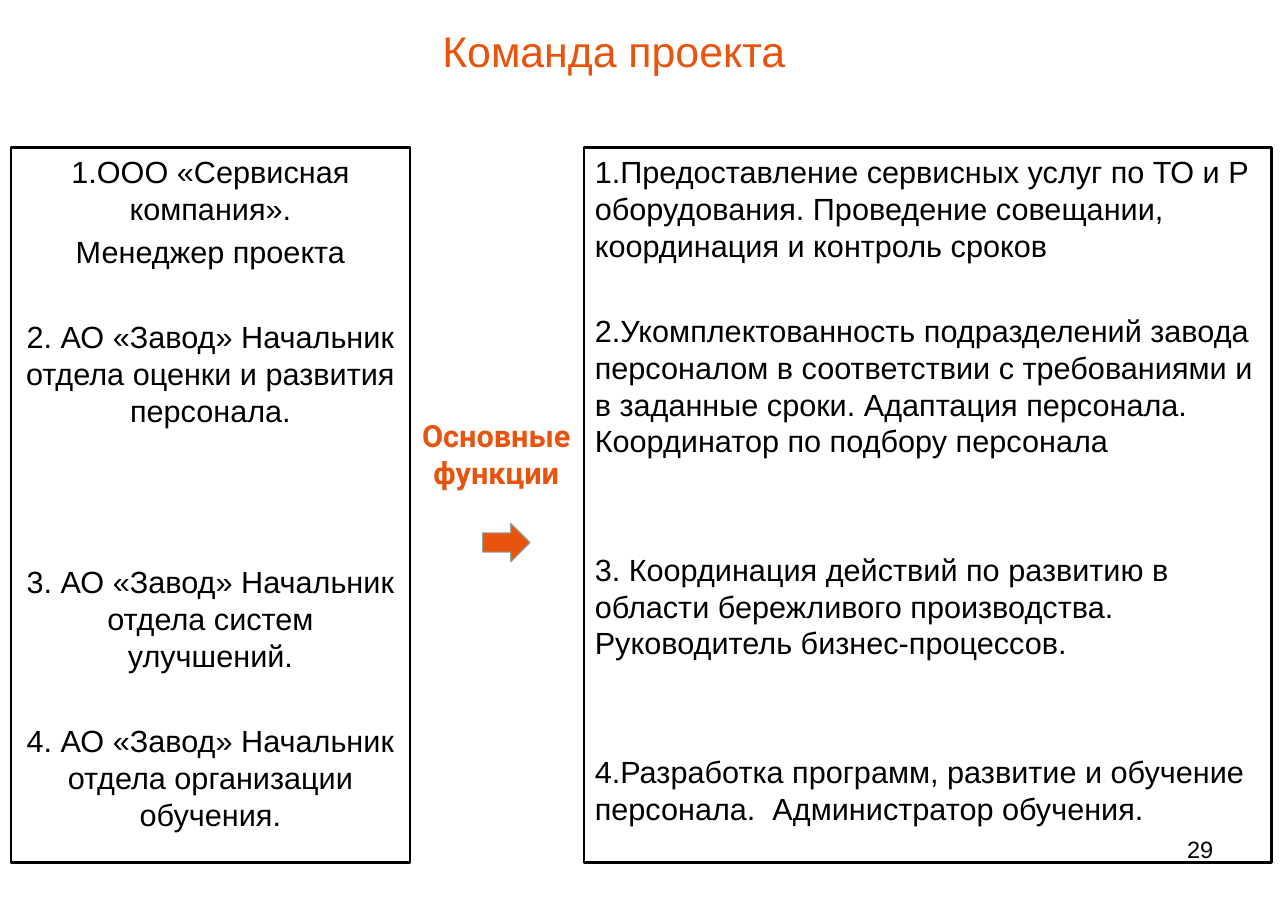
from dataclasses import dataclass

from pptx import Presentation
from pptx.dml.color import RGBColor
from pptx.enum.shapes import MSO_SHAPE
from pptx.enum.text import MSO_ANCHOR, PP_ALIGN
from pptx.util import Inches, Pt

RECT, ARROW = MSO_SHAPE.RECTANGLE, MSO_SHAPE.RIGHT_ARROW
LEFT, MID, RIGHT = PP_ALIGN.LEFT, PP_ALIGN.CENTER, PP_ALIGN.RIGHT
TOP, CENTER = MSO_ANCHOR.TOP, MSO_ANCHOR.MIDDLE
WIDTH, HEIGHT = Inches(11.69), Inches(8.27)
BLACK, ORANGE, GREY = "000000", "E8540E", "8AA6A8"
GAP, ROW = 4, 28


@dataclass
class Area:
    """Place on the slide in percent of its width and height."""
    left: float
    top: float
    width: float
    height: float

    def box(self) -> tuple[int, int, int, int]:
        """Return the place in slide units."""
        return (int(WIDTH * self.left / 100), int(HEIGHT * self.top / 100),
                int(WIDTH * self.width / 100), int(HEIGHT * self.height / 100))


@dataclass
class Item:
    """A paragraph and the number of empty rows above it."""
    text: str
    rows: int = 0


@dataclass
class Block:
    """Paragraphs of one style, with or without a frame."""
    area: Area
    items: list[Item]
    align: PP_ALIGN = MID
    size: float = 20
    font: str = "Arial"
    color: str = BLACK
    bold: bool = False
    anchor: MSO_ANCHOR = TOP
    framed: bool = False


BLOCKS = [
    Block(Area(9.58, 1.45, 76.13, 8.1), [Item("Команда проекта")],
          size=28, color=ORANGE, anchor=CENTER),
    Block(Area(0.86, 16.2, 30.97, 78.48), [
        Item("1.ООО «Сервисная компания»."),
        Item("Менеджер проекта"),
        Item("2. АО «Завод» Начальник отдела оценки и развития персонала.", 1),
        Item("3. АО «Завод» Начальник отдела систем улучшений.", 3),
        Item("4. АО «Завод» Начальник отдела организации обучения.", 1),
    ], framed=True),
    Block(Area(30.45, 45.22, 16.17, 9.31), [Item("Основные функции")],
          font="Roboto", color=ORANGE, bold=True),
    Block(Area(45.34, 16.2, 53.38, 78.48), [
        Item("1.Предоставление сервисных услуг по ТО и Р оборудования. "
             "Проведение совещании, координация и контроль сроков"),
        Item("2.Укомплектованность подразделений завода персоналом в "
             "соответствии с требованиями и в заданные сроки. Адаптация "
             "персонала. Координатор по подбору персонала", 1),
        Item("3. Координация действий по развитию в области бережливого "
             "производства. Руководитель бизнес-процессов.", 2),
        Item("4.Разработка программ, развитие и обучение персонала.  "
             "Администратор обучения.", 2),
    ], align=LEFT, framed=True),
    Block(Area(71.69, 91.05, 23.35, 6.89), [Item("29")], align=RIGHT, size=15.4),
]


def paint(target, code: str) -> None:
    """Set a solid colour on a fill, or a colour on a line or font."""
    if hasattr(target, "solid"):
        target.solid()
        target = target.fore_color
    else:
        target = target.color
    target.rgb = RGBColor.from_string(code)


def draw(slide, block: Block) -> None:
    """Draw one block of text."""
    if block.framed:
        shape = slide.shapes.add_shape(RECT, *block.area.box())
        shape.shadow.inherit = False
        shape.fill.background()
        paint(shape.line, BLACK)
        shape.line.width = Pt(1.5)
    else:
        shape = slide.shapes.add_textbox(*block.area.box())
    frame = shape.text_frame
    frame.word_wrap = True
    frame.vertical_anchor = block.anchor
    for num, item in enumerate(block.items):
        para = frame.add_paragraph() if num else frame.paragraphs[0]
        para.text = item.text
        para.alignment = block.align
        para.space_before = Pt(GAP + ROW * item.rows if num else 0)
        para.font.name = block.font
        para.font.size = Pt(block.size)
        para.font.bold = block.bold
        paint(para.font, block.color)


def point(slide, area: Area) -> None:
    """Draw the arrow from the team to its duties."""
    arrow = slide.shapes.add_shape(ARROW, *area.box())
    arrow.shadow.inherit = False
    paint(arrow.fill, ORANGE)
    paint(arrow.line, GREY)
    arrow.line.width = Pt(0.75)


def main() -> None:
    """Build and save the slide."""
    deck = Presentation()
    deck.slide_width, deck.slide_height = WIDTH, HEIGHT
    slide = deck.slides.add_slide(deck.slide_layouts[6])
    for block in BLOCKS:
        draw(slide, block)
    point(slide, Area(37.47, 57.44, 3.68, 4.23))
    deck.save("out.pptx")


if __name__ == "__main__":
    main()
